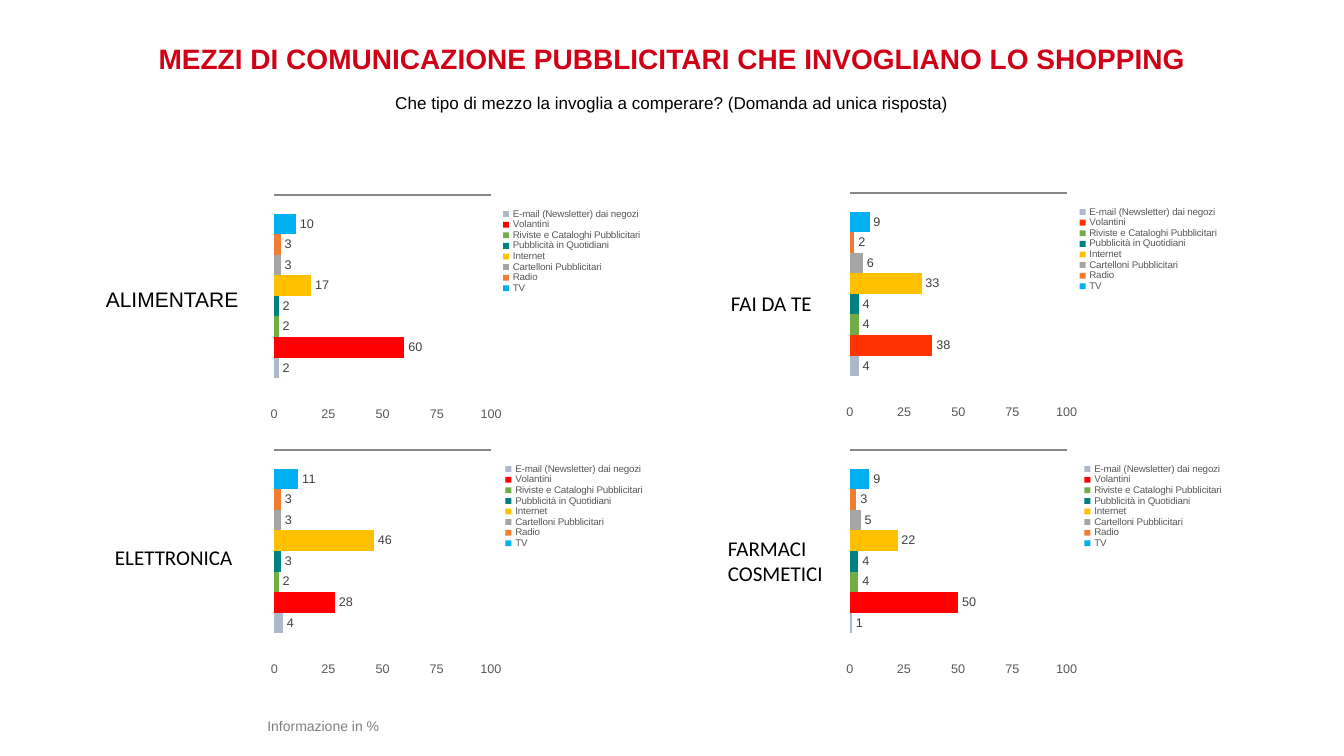
"""Build a slide with four bar charts on the advertising media that encourage shopping."""
from lxml import etree
from pptx import Presentation
from pptx.chart.data import CategoryChartData
from pptx.dml.color import RGBColor
from pptx.enum.chart import XL_CHART_TYPE as ChartType
from pptx.enum.chart import XL_LABEL_POSITION as LabelPosition
from pptx.enum.chart import XL_LEGEND_POSITION as LegendPosition
from pptx.enum.chart import XL_TICK_LABEL_POSITION as TickLabels
from pptx.enum.chart import XL_TICK_MARK as TickMark
from pptx.enum.text import MSO_ANCHOR, MSO_AUTO_SIZE
from pptx.enum.text import PP_ALIGN as Align
from pptx.oxml.ns import qn
from pptx.util import Inches, Pt

TITLE = "MEZZI DI COMUNICAZIONE PUBBLICITARI CHE INVOGLIANO LO SHOPPING"
MEDIA = [
    ("TV", "00B0F0"),
    ("Radio", "ED7D31"),
    ("Cartelloni Pubblicitari", "A5A5A5"),
    ("Internet", "FFC000"),
    ("Pubblicità in Quotidiani", "008080"),
    ("Riviste e Cataloghi Pubblicitari", "70AD47"),
    ("Volantini", "FF0000"),
    ("E-mail (Newsletter) dai negozi", "ADB9CA"),
]
CHARTS = [
    ((2.58, 1.8, 3.89, 2.38), [10, 3, 3, 17, 2, 2, 60, 2], {}),
    ((8.29, 1.78, 3.9, 2.38), [9, 2, 6, 33, 4, 4, 38, 4], {"Volantini": "FF3300"}),
    ((2.58, 4.33, 3.92, 2.38), [11, 3, 3, 46, 3, 2, 28, 4], {}),
    ((8.29, 4.33, 3.96, 2.38), [9, 3, 5, 22, 4, 4, 50, 1], {}),
]
TEXTS = [
    ("Che tipo di mezzo la invoglia a comperare? (Domanda ad unica risposta)",
     (1.85, 0.89, 9.63, 0.3),
     dict(size=12.2, name="Arial", align=Align.CENTER, line=0.9, before=3)),
    ("ELETTRONICA", (1.09, 5.35, 1.28, 0.3), dict(wrap=False)),
    ("ALIMENTARE", (1, 2.82, 1.46, 0.35), dict(name="Arial", line=0.9, before=10)),
    ("FAI DA TE", (7.2, 2.83, 0.92, 0.3), {}),
    ("FARMACI\nCOSMETICI", (7.17, 5.26, 1.28, 0.55), {}),
    ("Informazione in %", (-1.35, 7.1, 9.11, 0.3),
     dict(size=10, name="Arial", color="808080", align=Align.CENTER, line=0.81, before=8)),
]
PLOT_LEFT, PLOT_WIDTH = 0.14, 2.15


def rgb(color):
    return RGBColor.from_string(color)


def set_font(font, size, name, color, bold=False):
    font.size, font.name, font.bold = Pt(size), name, bold
    font.color.rgb = rgb(color)


def fill_text(shape, text, box, size=15, name="Calibri", color="000000", bold=False,
              align=Align.LEFT, line=1.0, before=0, wrap=True, anchor=MSO_ANCHOR.TOP):
    shape.left, shape.top, shape.width, shape.height = map(Inches, box)
    frame = shape.text_frame
    frame.text = text
    frame.word_wrap, frame.auto_size = wrap, MSO_AUTO_SIZE.NONE
    frame.vertical_anchor = anchor
    frame.margin_left = frame.margin_right = Inches(0.05)
    frame.margin_top = frame.margin_bottom = Inches(0.05)
    for paragraph in frame.paragraphs:
        paragraph.alignment, paragraph.line_spacing = align, line
        paragraph.space_before = Pt(before)
        for run in paragraph.runs:
            set_font(run.font, size, name, color, bold)


def set_layout(parent, index, x, y, w, h, inner=False):
    for old_layout in parent.findall(qn("c:layout")):
        parent.remove(old_layout)
    layout = etree.Element(qn("c:layout"))
    manual = etree.SubElement(layout, qn("c:manualLayout"))
    settings = [("layoutTarget", "inner")] if inner else []
    settings += [("xMode", "edge"), ("yMode", "edge"), ("x", x), ("y", y), ("w", w), ("h", h)]
    for tag, value in settings:
        etree.SubElement(manual, qn(f"c:{tag}")).set("val", str(value))
    parent.insert(index, layout)


def format_axes(chart):
    category_axis, value_axis = chart.category_axis, chart.value_axis
    for axis in (category_axis, value_axis):
        axis.major_tick_mark = axis.minor_tick_mark = TickMark.NONE
        axis.has_major_gridlines = False
    category_axis.reverse_order = True
    category_axis.tick_label_position = TickLabels.NONE
    category_axis.format.line.fill.background()
    value_axis.minimum_scale, value_axis.maximum_scale, value_axis.major_unit = 0, 100, 25
    value_axis.tick_label_position = TickLabels.HIGH
    value_axis.tick_labels.number_format = "0"
    value_axis.tick_labels.number_format_is_linked = False
    set_font(value_axis.tick_labels.font, 9, "Arial", "595959")
    value_axis.format.line.color.rgb = rgb("888888")
    value_axis.format.line.width = Pt(1)


def add_media_chart(slide, box, values, special_colors):
    data = CategoryChartData()
    data.categories = ["1"]
    for (name, _), value in zip(MEDIA, values):
        data.add_series(name, [value])
    chart = slide.shapes.add_chart(ChartType.BAR_CLUSTERED, *map(Inches, box), data).chart
    set_font(chart.font, 10, "Calibri", "000000")
    chart.has_title = False
    format_axes(chart)

    plot = chart.plots[0]
    plot.gap_width, plot.vary_by_categories = 182, False
    for series, (name, color) in zip(plot.series, MEDIA):
        series.format.fill.solid()
        series.format.fill.fore_color.rgb = rgb(special_colors.get(name, color))
        labels = series.data_labels
        labels.show_value, labels.position = True, LabelPosition.OUTSIDE_END
        labels.number_format, labels.number_format_is_linked = "0", False
        set_font(labels.font, 9, "Arial", "404040")

    chart.has_legend = True
    legend = chart.legend
    legend.position, legend.include_in_layout = LegendPosition.RIGHT, True
    set_font(legend.font, 7, "Arial", "595959")
    chart_root = chart.element if hasattr(chart, "element") else chart._chartSpace
    width = box[2]
    set_layout(chart_root.find(".//" + qn("c:plotArea")), 0, round(PLOT_LEFT / width, 3),
               0.057, round(PLOT_WIDTH / width, 3), 0.854, inner=True)
    set_layout(chart_root.find(".//" + qn("c:legend")), 1, 0.605, 0.115, 0.38, 0.36)


def main():
    presentation = Presentation()
    presentation.slide_width, presentation.slide_height = Inches(13.33), Inches(7.5)
    slide = presentation.slides.add_slide(presentation.slide_layouts[5])
    fill_text(slide.shapes.title, TITLE, (1.47, 0.37, 10.39, 0.45), size=20, name="Arial",
              color="D00017", bold=True, align=Align.CENTER, line=0.9, anchor=MSO_ANCHOR.MIDDLE)
    for box, values, special_colors in CHARTS:
        add_media_chart(slide, box, values, special_colors)
    for text, box, style in TEXTS:
        fill_text(slide.shapes.add_textbox(*map(Inches, box)), text, box, **style)
    presentation.save("out.pptx")


if __name__ == "__main__":
    main()
